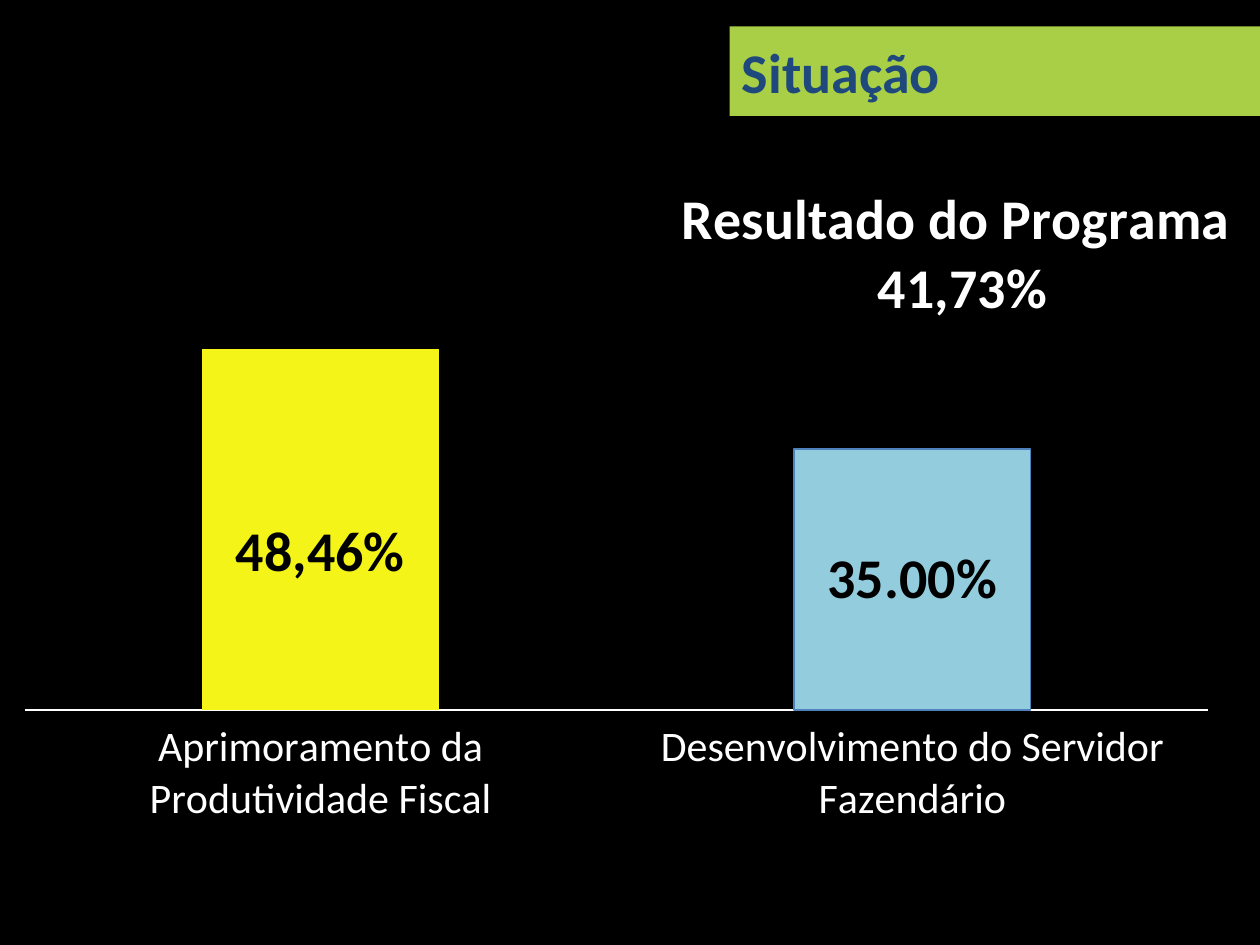
from lxml.etree import SubElement
from pptx import Presentation
from pptx.chart.data import CategoryChartData
from pptx.dml.color import RGBColor
from pptx.enum.chart import XL_CHART_TYPE, XL_LABEL_POSITION, XL_TICK_LABEL_POSITION, XL_TICK_MARK
from pptx.enum.shapes import MSO_SHAPE
from pptx.enum.text import MSO_ANCHOR, PP_ALIGN
from pptx.oxml.ns import qn
from pptx.util import Inches, Pt

COLORS = {
    "background": "000000",
    "banner": "A8CF45",
    "heading": "1F497D",
    "light": "FFFFFF",
    "dark": "000000",
    "productivity": "F4F418",
    "development": "93CDDD",
    "outline": "4F81BD",
}
HEADING = {"name": "Calibri", "size": Pt(32), "bold": True}
CATEGORY = {"name": "Calibri", "size": Pt(24), "bold": False}
BASE = {"name": "Calibri", "size": Pt(10)}


def color(name):
    """Return the named colour."""
    return RGBColor.from_string(COLORS[name])


def style_font(font, values, color_name):
    """Apply format values and a colour to a font."""
    for key, value in values.items():
        setattr(font, key, value)
    font.color.rgb = color(color_name)


def paint(part, color_name):
    """Fill a shape, chart point or background with a solid colour."""
    part.fill.solid()
    part.fill.fore_color.rgb = color(color_name)


def place(element, index, values):
    """Give a chart element a manual layout at a child index."""
    for old in element.findall(qn("c:layout")):
        element.remove(old)
    layout = SubElement(element, qn("c:layout"))
    element.insert(index, layout)
    manual = SubElement(layout, qn("c:manualLayout"))
    for key, value in values.items():
        SubElement(manual, qn(f"c:{key}")).set("val", str(value))


def add_banner(page, box):
    """Add the heading band."""
    banner = page.shapes.add_shape(MSO_SHAPE.RECTANGLE, *box)
    banner.shadow.inherit = False
    paint(banner, "banner")
    banner.line.fill.background()
    frame = banner.text_frame
    frame.vertical_anchor = MSO_ANCHOR.MIDDLE
    para = frame.paragraphs[0]
    para.alignment = PP_ALIGN.LEFT
    span = para.add_run()
    span.text = "Situação"
    style_font(span.font, HEADING, "heading")


def add_title(chart):
    """Add the programme result above the right-hand column."""
    title = chart.chart_title
    title.text_frame.text = "Resultado do Programa\n 41,73%"
    for para in title.text_frame.paragraphs:
        para.alignment = PP_ALIGN.CENTER
        style_font(para.runs[0].font, HEADING, "light")
    place(title._element, 1, {"xMode": "edge", "yMode": "edge", "x": 0.55, "y": 0.14})


def style_axes(chart):
    """Show the category axis and hide the value axis."""
    values = chart.value_axis
    for key, value in {"minimum_scale": 0, "maximum_scale": 0.6,
                       "has_major_gridlines": False, "visible": False}.items():
        setattr(values, key, value)
    values.tick_labels.number_format = "0.00%"
    values.tick_labels.number_format_is_linked = False
    categories = chart.category_axis
    for key, value in {"major_tick_mark": XL_TICK_MARK.NONE,
                       "minor_tick_mark": XL_TICK_MARK.NONE,
                       "tick_label_position": XL_TICK_LABEL_POSITION.LOW}.items():
        setattr(categories, key, value)
    style_font(categories.tick_labels.font, CATEGORY, "light")
    categories.format.line.color.rgb = color("light")
    categories.format.line.width = Pt(1)


def style_columns(plot):
    """Colour and label the columns."""
    for key, value in {"gap_width": 150, "overlap": -25, "vary_by_categories": False}.items():
        setattr(plot, key, value)
    series = plot.series[0]
    series.invert_if_negative = False
    paint(series.format, "productivity")
    development = series.points[1].format
    paint(development, "development")
    development.line.color.rgb = color("outline")
    development.line.width = Pt(0.75)

    labels = series.data_labels
    for key, value in {"show_value": True, "number_format": "0.00%",
                       "number_format_is_linked": False,
                       "position": XL_LABEL_POSITION.CENTER}.items():
        setattr(labels, key, value)
    style_font(labels.font, HEADING, "dark")
    label = series.points[0].data_label
    label.text_frame.text = "48,46%"
    style_font(label.text_frame.paragraphs[0].runs[0].font, HEADING, "dark")
    label.position = XL_LABEL_POSITION.CENTER
    place(labels._element.find(qn("c:dLbl")), 1, {"x": 0, "y": 0.03})


def add_results(page, box):
    """Add the column chart of programme results."""
    data = CategoryChartData(number_format="0.00%")
    data.categories = ["Aprimoramento da Produtividade Fiscal",
                       "Desenvolvimento do Servidor Fazendário"]
    data.add_series("Series 1", [0.4846, 0.35])
    chart = page.shapes.add_chart(XL_CHART_TYPE.COLUMN_CLUSTERED, *box, data).chart
    style_font(chart.font, BASE, "light")
    chart.has_legend = False
    add_title(chart)
    style_axes(chart)
    style_columns(chart.plots[0])
    area = chart._chartSpace.find(f".//{qn('c:plotArea')}")
    place(area, 0, {"layoutTarget": "inner", "xMode": "edge", "yMode": "edge",
                    "x": 0.02, "y": 0.25, "w": 0.96, "h": 0.59})


def main():
    """Build and save the deck."""
    deck = Presentation()
    deck.slide_width, deck.slide_height = Inches(10), Inches(7.5)
    page = deck.slides.add_slide(deck.slide_layouts[6])
    paint(page.background, "background")
    add_banner(page, [Inches(n) for n in (5.79, 0.21, 4.21, 0.71)])
    add_results(page, [Inches(n) for n in (0, 0.58, 9.8, 6.02)])
    deck.save("out.pptx")


if __name__ == "__main__":
    main()
